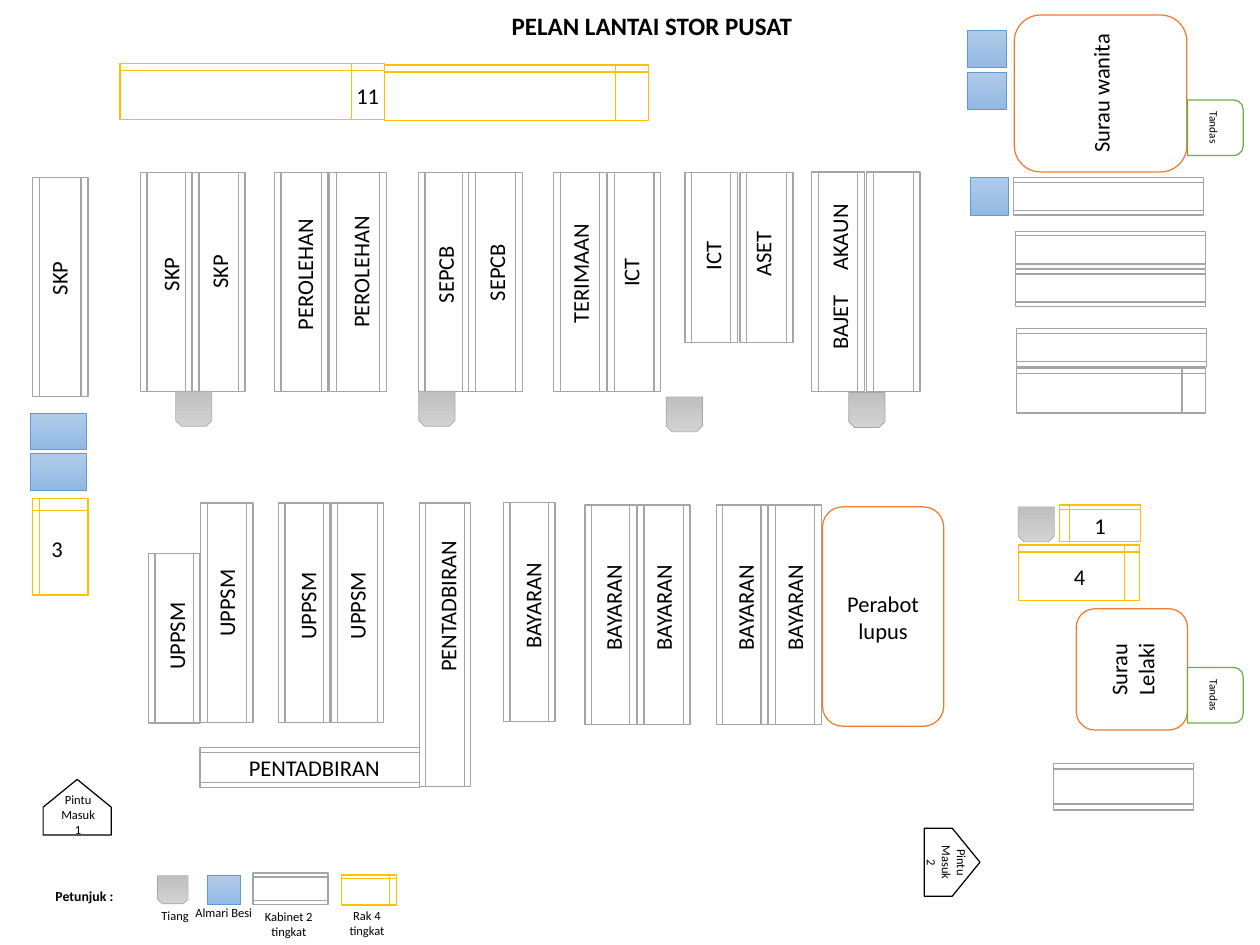
from dataclasses import dataclass

from pptx import Presentation
from pptx.dml.color import RGBColor
from pptx.enum.shapes import MSO_SHAPE
from pptx.enum.text import MSO_ANCHOR, MSO_AUTO_SIZE, PP_ALIGN
from pptx.util import Pt


@dataclass(frozen=True)
class Theme:
    font: str = "Calibri"
    ink: str = "000000"
    paper: str = "FFFFFF"
    cabinet: str = "A5A5A5"
    rack: str = "FFC000"
    room: str = "ED7D31"
    toilet: str = "70AD47"
    steel: str = "5B9BD5"
    steel_fade: tuple = ("B1CBE9", "93B9E4")
    pillar_fade: tuple = ("D2D2D2", "C0C0C0")
    title: int = 20
    label: int = 18
    heading: int = 11
    note: int = 10
    small: int = 9


THEME = Theme()
ROW = 175.5

UPRIGHT_CABINETS = [
    (26, 142, 44.5, ROW),
    *[(left, 138, width, ROW) for left, width in (
        (112.5, 41), (154, 42), (219.5, 43), (263.5, 45.5),
        (335, 40), (375, 43), (443, 42), (486, 42.5))],
    (548, 138, 42, 136), (592, 138, 42.5, 136),
    (649.5, 137.5, 42, ROW), (693.5, 137.5, 42.5, ROW),
    (119, 443, 41, 135.5),
    *[(left, 402.5, width, ROW) for left, width in (
        (160.5, 42), (223, 41), (265, 42))],
    (335.5, 402.5, 41, 227), (403, 402, 41, ROW),
    *[(left, 404, width, ROW) for left, width in (
        (468, 41), (510, 42), (573, 41), (615, 42))],
]
FLAT_CABINETS = [
    (811, 142, 152, 30), (812.5, 185, 152, 30), (812.5, 215.5, 152, 30),
    (813, 263, 152, 30), (160, 598, ROW, 32), (843, 610.5, 112, 37.5),
    (202.5, 698.5, 60, 25),
]
RACKS = [
    (96, 51, 211.5, 44.5, 90), (307.5, 52, 211.5, 44.5, 90),
    (814.5, 436, 97, 44.5, 90), (273, 700, 44, 24, 90),
    (26, 399, 44.5, 77, 0), (847.5, 404, 65, 29.5, 0),
]
STEEL_CUPBOARDS = [
    (24.5, 330.5, 44.5, 29), (24.5, 363, 44.5, 29), (774, 24, 31, 30),
    (774, 57.5, 31, 30), (776, 142, 31, 30), (165.5, 700.5, 26.5, 23),
]
PILLARS = [
    (140.5, 313, 29, 28), (335, 313, 29, 28), (533, 317.5, 29, 28),
    (679, 314, 29, 28), (814.5, 405.5, 29, 28), (126, 700.5, 24.5, 22.5),
]
ROOMS = [
    ("Perabot lupus", 658, 405.5, 97, ROW, 0),
    ("Surau wanita", 811.5, 12, 138, 125.5, 270),
    ("Surau Lelaki", 861, 487, 89, 97, 270),
]
TOILET_TOPS = (80, 534)
DOORS = [(739.5, 662.5, 44.5, 54.5, 0), (34.5, 623.5, 54.5, 44.5, 270)]

UPRIGHT_LABELS = [
    ("SKP", 47, 222.5), ("SKP", 136.5, 219.5), ("SKP", 175.5, 217.5),
    ("PEROLEHAN", 243.5, 219.5), ("PEROLEHAN", 288.5, 217.5),
    ("SEPCB", 356, 219.5), ("SEPCB", 397, 218),
    ("TERIMAAN", 464, 219), ("ICT", 504.5, 218),
    ("ICT", 570, 204.5), ("ASET", 610, 203),
    ("BAJET", 671.5, 258), ("AKAUN", 671.5, 190),
    ("UPPSM", 141, 509), ("UPPSM", 181, 482.5),
    ("UPPSM", 246, 485), ("UPPSM", 285.5, 484.5),
    ("PENTADBIRAN", 358, 485), ("BAYARAN", 426, 484.5),
    *[("BAYARAN", x, 486) for x in (490.5, 530.5, 596, 635.5)],
]
FLAT_LABELS = [
    ("PENTADBIRAN", 271, 614, 158), ("11", 300.5, 76.5, 45),
    ("3", 56.5, 439, 45), ("4", 874.5, 461, 45), ("1", 891, 420.5, 45),
]
LEGEND_LABELS = [
    ("Tiang", 140, 732.5, 60, 19.5), ("Almari Besi", 179, 736, 64, 31.5),
    ("Kabinet 2 tingkat", 231, 739.5, 60, 31.5),
    ("Rak 4 tingkat", 293.5, 738.5, 60, 31.5),
]


def colour(value):
    return RGBColor.from_string(value)


def place(left, top, width, height, turn):
    if turn in (90, 270):
        left += (width - height) / 2
        top += (height - width) / 2
        width, height = height, width
    return [Pt(value) for value in (left, top, width, height)]


def write(frame, text, size=THEME.label, bold=False, align=PP_ALIGN.CENTER,
          anchor=MSO_ANCHOR.TOP):
    frame.word_wrap = True
    frame.auto_size = MSO_AUTO_SIZE.NONE
    frame.vertical_anchor = anchor
    for index, line in enumerate(text.split("\n")):
        para = frame.add_paragraph() if index else frame.paragraphs[0]
        para.alignment = align
        span = para.add_run()
        span.text = line
        span.font.name = THEME.font
        span.font.size = Pt(size)
        span.font.bold = bold
        span.font.color.rgb = colour(THEME.ink)


def add_block(page, kind, bounds, line, turn=0, weight=1, fade=None):
    block = page.shapes.add_shape(kind, *place(*bounds, turn))
    block.rotation = turn
    block.shadow.inherit = False
    block.line.color.rgb = colour(line)
    block.line.width = Pt(weight)
    if fade:
        block.fill.gradient()
        block.fill.gradient_angle = 270
        for stop, position, shade in zip(block.fill.gradient_stops, (0, 1), fade):
            stop.position = position
            stop.color.rgb = colour(shade)
    else:
        block.fill.solid()
        block.fill.fore_color.rgb = colour(THEME.paper)
    return block


def add_label(page, text, x, y, width=149, height=29, turn=0, **style):
    box = page.shapes.add_textbox(
        Pt(x - width / 2), Pt(y - height / 2), Pt(width), Pt(height))
    box.rotation = turn
    write(box.text_frame, text, **style)


def add_title(page, text):
    title = page.shapes.title
    title.left, title.top, title.width, title.height = place(353, 5, 337, 31.5, 0)
    write(title.text_frame, text, size=THEME.title, bold=True)


def add_storage(page):
    for bounds in UPRIGHT_CABINETS:
        add_block(page, MSO_SHAPE.FLOWCHART_PREDEFINED_PROCESS, bounds, THEME.cabinet)
    for bounds in FLAT_CABINETS:
        add_block(page, MSO_SHAPE.FLOWCHART_PREDEFINED_PROCESS, bounds,
                  THEME.cabinet, turn=90)
    add_block(page, MSO_SHAPE.FLOWCHART_INTERNAL_STORAGE, (813.5, 294.5, 151, 36),
              THEME.cabinet, turn=90)
    for *bounds, turn in RACKS:
        add_block(page, MSO_SHAPE.FLOWCHART_INTERNAL_STORAGE, bounds, THEME.rack, turn)
    for bounds in STEEL_CUPBOARDS:
        add_block(page, MSO_SHAPE.RECTANGLE, bounds, THEME.steel,
                  weight=0.5, fade=THEME.steel_fade)


def add_building(page):
    for bounds in PILLARS:
        add_block(page, MSO_SHAPE.SNIP_2_SAME_RECTANGLE, bounds, THEME.cabinet,
                  turn=180, weight=0.5, fade=THEME.pillar_fade)
    for text, *bounds, turn in ROOMS:
        room = add_block(page, MSO_SHAPE.ROUNDED_RECTANGLE, bounds, THEME.room, turn)
        write(room.text_frame, text, anchor=MSO_ANCHOR.MIDDLE)
    for top in TOILET_TOPS:
        toilet = add_block(page, MSO_SHAPE.ROUND_2_SAME_RECTANGLE,
                           (950, top, 44.5, 44.5), THEME.toilet, turn=90)
        write(toilet.text_frame, "Tandas", size=THEME.small, anchor=MSO_ANCHOR.MIDDLE)
    for *bounds, turn in DOORS:
        add_block(page, MSO_SHAPE.PENTAGON, bounds, THEME.ink, turn)


def add_labels(page):
    for text, x, y in UPRIGHT_LABELS:
        add_label(page, text, x, y, turn=270)
    for text, x, y, width in FLAT_LABELS:
        add_label(page, text, x, y, width, align=PP_ALIGN.LEFT)
    for number, x, y, turn in ((1, 62.5, 652, 0), (2, 757, 690, 90)):
        add_label(page, f"Pintu Masuk\n{number}", x, y, 61, 44, turn, size=THEME.note)
    add_label(page, "Petunjuk :", 67.5, 717, 93, 21, size=THEME.heading, bold=True)
    for text, x, y, width, height in LEGEND_LABELS:
        add_label(page, text, x, y, width, height, size=THEME.note)


def main():
    deck = Presentation()
    deck.slide_width, deck.slide_height = Pt(1008), Pt(756)
    page = deck.slides.add_slide(deck.slide_layouts[5])
    add_title(page, "PELAN LANTAI STOR PUSAT")
    add_storage(page)
    add_building(page)
    add_labels(page)
    deck.save("out.pptx")


if __name__ == "__main__":
    main()
